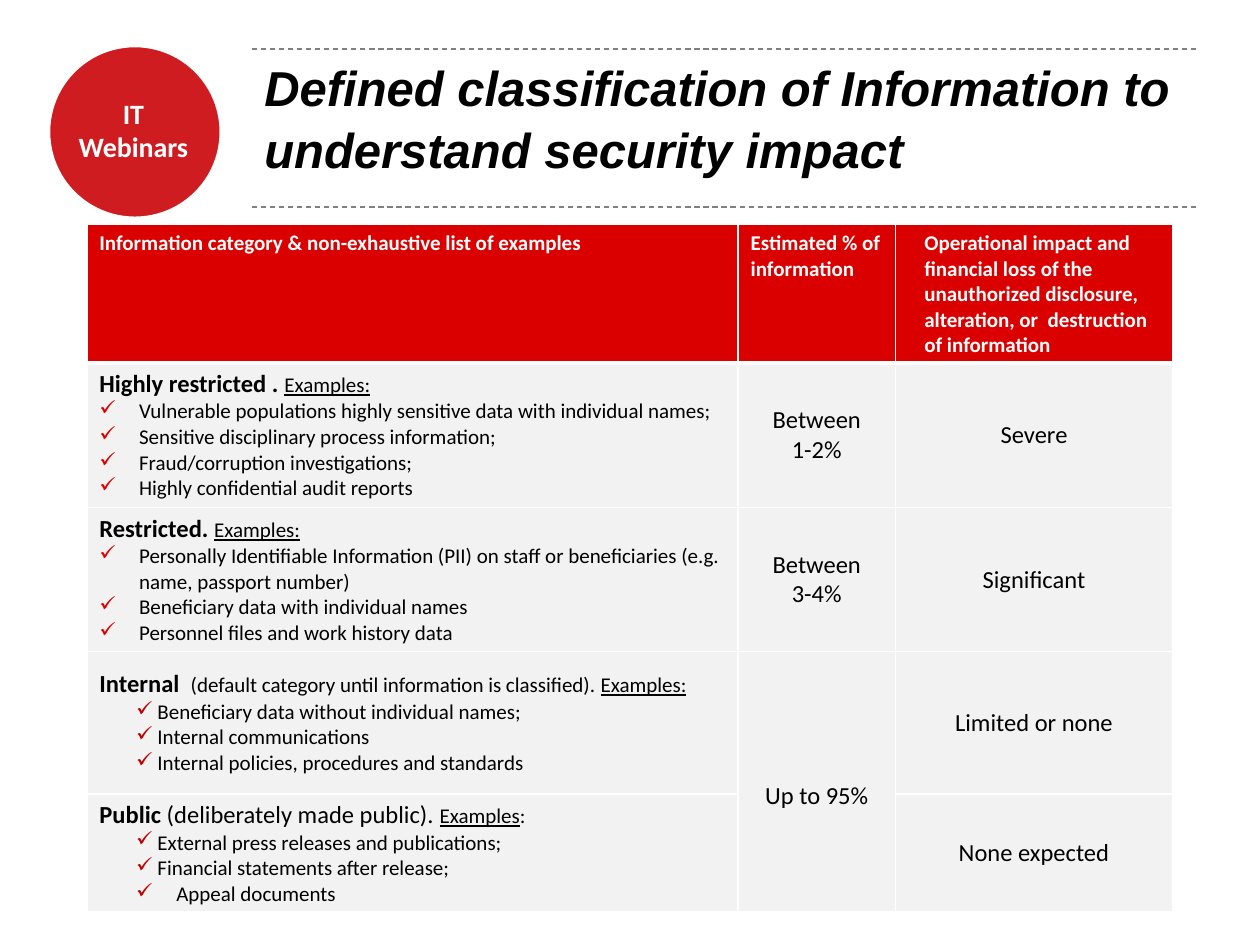
"""Build a slide on information classes and their security impact."""
from lxml import etree
from pptx import Presentation
from pptx.dml.color import RGBColor
from pptx.enum.dml import MSO_LINE
from pptx.enum.shapes import MSO_CONNECTOR, MSO_SHAPE
from pptx.enum.text import MSO_ANCHOR, PP_ALIGN
from pptx.oxml.ns import qn
from pptx.util import Cm, Pt

WHITE = RGBColor(0xFF, 0xFF, 0xFF)
BLACK = RGBColor(0x00, 0x00, 0x00)
GREY = RGBColor(0x80, 0x80, 0x80)
PALE = RGBColor(0xF2, 0xF2, 0xF2)
RED = RGBColor(0xDB, 0x00, 0x00)
DARK_RED = RGBColor(0xC0, 0x00, 0x00)
BADGE_RED = RGBColor(0xCF, 0x1C, 0x21)

LEFT, CENTER = PP_ALIGN.LEFT, PP_ALIGN.CENTER
TOP, MIDDLE = MSO_ANCHOR.TOP, MSO_ANCHOR.MIDDLE
DASH, STRAIGHT, OVAL = MSO_LINE.DASH, MSO_CONNECTOR.STRAIGHT, MSO_SHAPE.OVAL

COLUMN_WIDTHS = [13.13, 3.17, 5.59]
ROW_HEIGHTS = [1.8, 2.92, 2.9, 2.87, 2.36]

HEADERS = [
    ("Information category & non-exhaustive list of examples", 0),
    ("Estimated % of information", 0),
    ("Operational impact and financial loss of the unauthorized disclosure, "
     "alteration, or  destruction of information", 0.33),
]

NAME = {"size": 14, "bold": True}
EXAMPLES = {"underline": True}
HANGING = {"color": RED, "margin": 0.8, "indent": -0.8}
INSET = {"color": DARK_RED, "margin": 1.17, "indent": -0.43}
DEEP = {"color": DARK_RED, "margin": 1.55, "indent": -0.81}

CATEGORIES = [
    ([("Highly restricted . ", NAME), ("Examples:", EXAMPLES)],
     [("Vulnerable populations highly sensitive data with individual names;", HANGING),
      ("Sensitive disciplinary process information;", HANGING),
      ("Fraud/corruption investigations;", HANGING),
      ("Highly confidential audit reports", HANGING)]),
    ([("Restricted. ", NAME), ("Examples:", EXAMPLES)],
     [("Personally Identifiable Information (PII) on staff or beneficiaries "
       "(e.g. name, passport number)", HANGING),
      ("Beneficiary data with individual names", HANGING),
      ("Personnel files and work history data", HANGING)]),
    ([("Internal  ", NAME),
      ("(default category until information is classified). ", {}),
      ("Examples:", EXAMPLES)],
     [("Beneficiary data without individual names;", INSET),
      ("Internal communications", INSET),
      ("Internal policies, procedures and standards", INSET)]),
    ([("Public", NAME), (" (deliberately made public). ", {"size": 14}),
      ("Examples", EXAMPLES), (":", {})],
     [("External press releases and publications;", INSET),
      ("Financial statements after release;", INSET),
      ("Appeal documents", DEEP)]),
]
SHARES = [["Between", "1-2%"], ["Between", "3-4%"], ["Up to 95%"]]
IMPACTS = ["Severe", "Significant", "Limited or none", "None expected"]


def add_text(paragraph, text, size=12, font="Calibri", color=BLACK,
             bold=False, italic=False, underline=False, align=LEFT):
    """Append a formatted run to a paragraph."""
    paragraph.alignment = align
    run = paragraph.add_run()
    run.text = text
    run.font.size = Pt(size)
    run.font.name = font
    run.font.color.rgb = color
    run.font.bold = bold
    run.font.italic = italic
    run.font.underline = underline


def add_lines(frame, lines, **text_format):
    """Fill an empty text frame with one paragraph per line."""
    for index, line in enumerate(lines):
        paragraph = frame.add_paragraph() if index else frame.paragraphs[0]
        add_text(paragraph, line, **text_format)


def add_text_box(slide, left, top, width, height, margin=None):
    """Add a wrapping, middle-anchored text box and return its frame."""
    box = slide.shapes.add_textbox(Cm(left), Cm(top), Cm(width), Cm(height))
    frame = box.text_frame
    frame.word_wrap = True
    frame.vertical_anchor = MIDDLE
    if margin is not None:
        frame.margin_left = frame.margin_right = Cm(margin)
        frame.margin_top = frame.margin_bottom = Cm(margin)
    return frame


def add_badge(slide):
    """Add the round series badge with its label."""
    circle = slide.shapes.add_shape(OVAL, Cm(0.97), Cm(0.91), Cm(3.5), Cm(3.5))
    circle.shadow.inherit = False
    circle.fill.solid()
    circle.fill.fore_color.rgb = BADGE_RED
    circle.line.color.rgb = WHITE
    circle.line.width = Pt(2.5)
    frame = add_text_box(slide, 1.09, 1.93, 3.2, 1.37, margin=0)
    add_lines(frame, ["IT", "Webinars"], size=16, color=WHITE, bold=True, align=CENTER)


def add_rule(slide, top):
    """Add a dashed horizontal rule beside the badge."""
    rule = slide.shapes.add_connector(STRAIGHT, Cm(5.08), Cm(top), Cm(24.13), Cm(top))
    rule.line.color.rgb = GREY
    rule.line.width = Pt(0.75)
    rule.line.dash_style = DASH
    etree.SubElement(rule._element.spPr, qn("a:effectLst"))


def set_bullet(paragraph, color, margin, indent):
    """Give a paragraph a coloured check mark and its indents."""
    properties = paragraph._p.get_or_add_pPr()
    properties.set("marL", str(Cm(margin)))
    properties.set("indent", str(Cm(indent)))
    bullet_color = etree.SubElement(properties, qn("a:buClr"))
    etree.SubElement(bullet_color, qn("a:srgbClr"), val=str(color))
    etree.SubElement(properties, qn("a:buChar"), char="✓")


def style_cell(cell, fill, anchor=MIDDLE, top=1, bottom=1):
    """Set the fill, anchor and white borders of a cell."""
    cell.fill.solid()
    cell.fill.fore_color.rgb = fill
    cell.vertical_anchor = anchor
    properties = cell._tc.get_or_add_tcPr()
    sides = [("a:lnL", 1), ("a:lnR", 1), ("a:lnT", top), ("a:lnB", bottom)]
    for index, (tag, width) in enumerate(sides):
        border = etree.Element(qn(tag), w=str(Pt(width)))
        border_fill = etree.SubElement(border, qn("a:solidFill"))
        etree.SubElement(border_fill, qn("a:srgbClr"), val=str(WHITE))
        properties.insert(index, border)


def fill_category(cell, heading, examples):
    """Write a category heading and its bulleted examples."""
    frame = cell.text_frame
    for text, text_format in heading:
        add_text(frame.paragraphs[0], text, **text_format)
    for text, bullet in examples:
        paragraph = frame.add_paragraph()
        add_text(paragraph, text)
        set_bullet(paragraph, **bullet)


def add_classification_table(slide):
    """Add the table of categories, shares and impacts."""
    table = slide.shapes.add_table(
        len(ROW_HEIGHTS), len(COLUMN_WIDTHS), Cm(1.75), Cm(4.52),
        Cm(sum(COLUMN_WIDTHS)), Cm(sum(ROW_HEIGHTS))).table
    table.horz_banding = False
    for column, width in zip(table.columns, COLUMN_WIDTHS):
        column.width = Cm(width)
    for row, height in zip(table.rows, ROW_HEIGHTS):
        row.height = Cm(height)

    for column, (text, margin) in enumerate(HEADERS):
        cell = table.cell(0, column)
        style_cell(cell, RED, TOP, bottom=3)
        paragraph = cell.text_frame.paragraphs[0]
        add_text(paragraph, text, color=WHITE, bold=True)
        paragraph._p.get_or_add_pPr().set("marL", str(Cm(margin)))

    for row in range(1, len(ROW_HEIGHTS)):
        for column in range(len(COLUMN_WIDTHS)):
            style_cell(table.cell(row, column), PALE, top=3 if row == 1 else 1)
    for row, (heading, examples) in enumerate(CATEGORIES, 1):
        fill_category(table.cell(row, 0), heading, examples)
    for row, lines in enumerate(SHARES, 1):
        add_lines(table.cell(row, 1).text_frame, lines, size=14, align=CENTER)
    for row, impact in enumerate(IMPACTS, 1):
        add_lines(table.cell(row, 2).text_frame, [impact], size=14, align=CENTER)
    shared_cell = table.cell(3, 1)
    shared_cell.merge(table.cell(4, 1))
    shared_cell.margin_top = Cm(0.73)


def main():
    """Build and save the presentation."""
    presentation = Presentation()
    presentation.slide_width, presentation.slide_height = Cm(25.4), Cm(19.05)
    slide = presentation.slides.add_slide(presentation.slide_layouts[6])
    add_badge(slide)
    for top in (0.99, 4.17):
        add_rule(slide, top)
    title = add_text_box(slide, 5.08, 0.97, 19.05, 2.74)
    add_lines(title, ["Defined classification of Information to understand security impact"],
              size=28, font="Arial", bold=True, italic=True)
    title.paragraphs[0].line_spacing = 1.05
    add_classification_table(slide)
    presentation.save("out.pptx")


if __name__ == "__main__":
    main()
